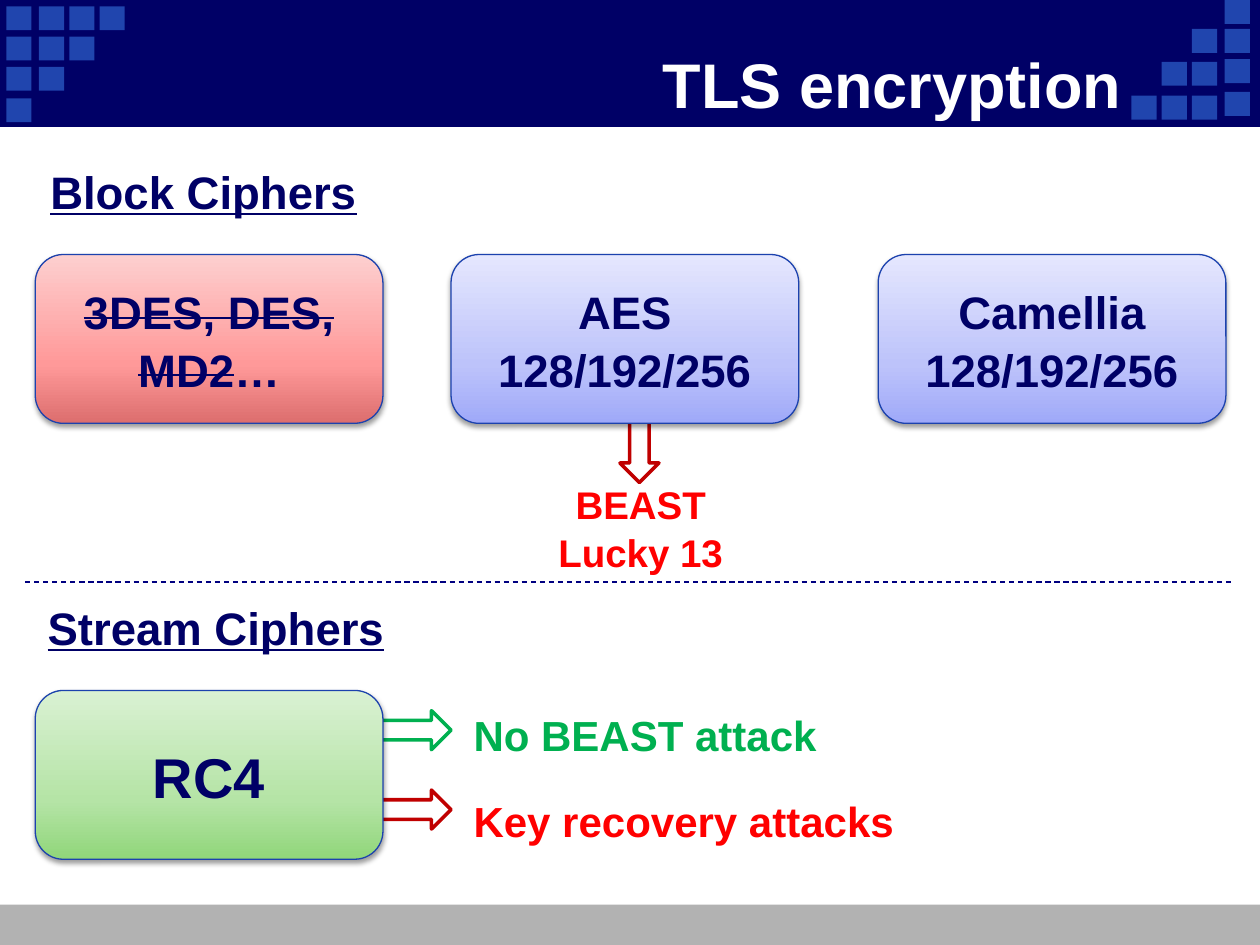
import copy

import pptx
import pptx.dml.color
import pptx.enum.dml
import pptx.enum.shapes
import pptx.enum.text
import pptx.oxml.ns
import pptx.util
from lxml import etree

RGBColor = pptx.dml.color.RGBColor
SHAPE = pptx.enum.shapes.MSO_SHAPE
ALIGN = pptx.enum.text.PP_ALIGN
ANCHOR = pptx.enum.text.MSO_ANCHOR

NAVY = RGBColor(0x00, 0x00, 0x66)
WHITE = RGBColor(0xFF, 0xFF, 0xFF)
GRAY = RGBColor(0xB2, 0xB2, 0xB2)
SQUARE_BLUE = RGBColor(0x20, 0x45, 0xAE)
OUTLINE_BLUE = RGBColor(0x1C, 0x42, 0xAE)
DIVIDER_BLUE = RGBColor(0x00, 0x00, 0x80)
RED = RGBColor(0xFF, 0x00, 0x00)
DARK_RED = RGBColor(0xC0, 0x00, 0x00)
GREEN = RGBColor(0x00, 0xB0, 0x50)
# Gradients run from the bottom of a box to its top.
BLUES = RGBColor(0x9F, 0xA9, 0xF9), RGBColor(0xBD, 0xC3, 0xFA), RGBColor(0xE5, 0xE7, 0xFE)
REDS = RGBColor(0xDC, 0x6E, 0x6E), RGBColor(0xFF, 0x99, 0x99), RGBColor(0xFD, 0xCF, 0xCF)
GREENS = RGBColor(0x90, 0xD6, 0x7A), RGBColor(0xB5, 0xE4, 0xA6), RGBColor(0xDA, 0xF1, 0xD3)
STOPS = 0, 0.35, 1

# The slide is a grid of 100 columns by 75 rows; boxes are left, top, width, height.
WIDTH, HEIGHT = pptx.util.Inches(10), pptx.util.Inches(7.5)
COLUMN, ROW = WIDTH / 100, HEIGHT / 75
CIPHER_WIDTH, CIPHER_HEIGHT = 27.6, 13.4
ARROW_LENGTH, ARROW_BREADTH = 6.3, 3.1

# Column position: row positions of the squares in it.
LEFT_SQUARES = {0.5: (0.5, 2.9, 5.3, 7.8), 3.1: (0.5, 2.9, 5.3),
                5.5: (0.5, 2.9), 7.9: (0.5,)}
RIGHT_SQUARES = {97.2: (0, 2.3, 4.7, 7.3), 94.6: (2.3, 4.9, 7.6),
                 92.2: (4.9, 7.6), 89.8: (7.6,)}


def cells(box):
    """Turn a grid box into slide lengths."""
    return [round(value * unit) for value, unit in zip(box, (COLUMN, ROW) * 2)]


def within(region, left, top, width, height):
    """Grid box of a part, measured from the corner of its region."""
    return region[0] + left, region[1] + top, width, height


def add_plain(page, kind, box, fill=None, line=None, weight=0.75):
    shape = page.shapes.add_shape(kind, *cells(box))
    shape.shadow.inherit = False
    if fill is None:
        shape.fill.background()
    else:
        shape.fill.solid()
        shape.fill.fore_color.rgb = fill
    if line is None:
        shape.line.fill.background()
    else:
        shape.line.color.rgb = line
        shape.line.width = pptx.util.Pt(weight)
    return shape


def format_para(para, size, color, align):
    para.alignment = align
    para.line_spacing = 1.05
    for span in para.runs:
        span.font.name = "Arial"
        span.font.size = pptx.util.Pt(size)
        span.font.bold = True
        span.font.color.rgb = color


def add_text(page, box, lines, size, align=ALIGN.CENTER, gap=0):
    """Text box with one paragraph for each (wording, colour) pair."""
    shape = page.shapes.add_textbox(*cells(box))
    frame = shape.text_frame
    frame.word_wrap = True
    frame.text = "\n".join(wording for wording, color in lines)
    for index, (para, (wording, color)) in enumerate(zip(frame.paragraphs, lines)):
        format_para(para, size, color, align)
        if index and gap:
            para.space_before = pptx.util.Pt(gap)
    return frame


def add_heading(page, box, wording):
    frame = add_text(page, box, [(wording, NAVY)], 26)
    frame.paragraphs[0].runs[0].font.underline = True


def shade(shape, colors):
    fill = shape.fill
    fill.gradient()
    fill.gradient_angle = 90
    stops = shape._element.spPr.find(".//" + pptx.oxml.ns.qn("a:gsLst"))
    stops.append(copy.deepcopy(stops[0]))
    for stop, position, color in zip(fill.gradient_stops, STOPS, colors):
        stop.position = position
        stop.color.rgb = color


def drop_shadow(shape):
    qn = pptx.oxml.ns.qn
    effects = shape._element.spPr.find(qn("a:effectLst"))
    shadow = etree.SubElement(
        effects, qn("a:outerShdw"), blurRad=str(pptx.util.Pt(3.1)),
        dist=str(pptx.util.Pt(1.6)), dir="5400000", rotWithShape="0")
    color = etree.SubElement(shadow, qn("a:srgbClr"), val="000000")
    etree.SubElement(color, qn("a:alpha"), val="38000")


def add_cipher(page, region, left, top, wording, colors, size=26, struck=""):
    """Rounded cipher box; the struck wording comes before the plain one."""
    box = within(region, left, top, CIPHER_WIDTH, CIPHER_HEIGHT)
    shape = add_plain(page, SHAPE.ROUNDED_RECTANGLE, box, WHITE, OUTLINE_BLUE)
    shade(shape, colors)
    drop_shadow(shape)
    frame = shape.text_frame
    frame.word_wrap = True
    frame.vertical_anchor = ANCHOR.MIDDLE
    para = frame.paragraphs[0]
    if struck:
        span = para.add_run()
        span.text = struck
        span._r.get_or_add_rPr().set("strike", "sngStrike")
    para.add_run().text = wording
    format_para(para, size, NAVY, ALIGN.CENTER)


def add_header(page, region, wording):
    add_plain(page, SHAPE.RECTANGLE, region, NAVY, NAVY)
    for left, tops in (LEFT_SQUARES | RIGHT_SQUARES).items():
        for top in tops:
            add_plain(page, SHAPE.RECTANGLE, within(region, left, top, 2, 1.9), SQUARE_BLUE)
    title = page.shapes.title
    title.left, title.top, title.width, title.height = cells(
        within(region, 9.2, 3.5, 80.8, 6.2))
    frame = title.text_frame
    frame.text = wording
    frame.auto_size = pptx.enum.text.MSO_AUTO_SIZE.NONE
    frame.vertical_anchor = ANCHOR.MIDDLE
    format_para(frame.paragraphs[0], 36, WHITE, ALIGN.RIGHT)
    frame.paragraphs[0].line_spacing = 1
    page.shapes._spTree.append(title._element)


def add_block_ciphers(page, region):
    add_heading(page, within(region, 0, 0, 28.3, 5.4), "Block Ciphers")
    add_plain(page, SHAPE.DOWN_ARROW,
              within(region, 47.2, 19.7, ARROW_BREADTH, ARROW_LENGTH), line=DARK_RED, weight=2)
    add_cipher(page, region, 0.8, 7.9, "…", REDS, struck="3DES, DES, MD2")
    add_cipher(page, region, 33.8, 7.9, "AES 128/192/256", BLUES)
    add_cipher(page, region, 67.7, 7.9, "Camellia 128/192/256", BLUES)
    add_text(page, within(region, 38.6, 25.2, 20.5, 8.4),
             [("BEAST", RED), ("Lucky 13", RED)], 22)


def add_divider(page, left, right, top):
    start_x, start_y, end_x, end_y = cells((left, top, right, top))
    line = page.shapes.add_connector(
        pptx.enum.shapes.MSO_CONNECTOR.STRAIGHT, start_x, start_y, end_x, end_y)
    line.line.color.rgb = DIVIDER_BLUE
    line.line.width = pptx.util.Pt(0.75)
    line.line.dash_style = pptx.enum.dml.MSO_LINE.DASH
    etree.SubElement(line._element.spPr, pptx.oxml.ns.qn("a:effectLst"))


def add_stream_ciphers(page, region):
    add_heading(page, within(region, 0, 0, 30.3, 5.4), "Stream Ciphers")
    for top, color in ((9.5, GREEN), (15.8, DARK_RED)):
        add_plain(page, SHAPE.RIGHT_ARROW,
                  within(region, 27.5, top, ARROW_LENGTH, ARROW_BREADTH), line=color, weight=2)
    add_cipher(page, region, 0.8, 7.9, "RC4", GREENS, size=32)
    add_text(page, within(region, 34.6, 8.7, 39.9, 11.8),
             [("No BEAST attack", GREEN), ("Key recovery attacks", RED)],
             24, ALIGN.LEFT, gap=19)


def main():
    deck = pptx.Presentation()
    deck.slide_width, deck.slide_height = WIDTH, HEIGHT
    page = deck.slides.add_slide(deck.slide_layouts.get_by_name("Title Only"))
    add_plain(page, SHAPE.RECTANGLE, (0, 71.8, 100, 3.2), GRAY)
    add_header(page, (0, 0, 100, 10), "TLS encryption")
    add_block_ciphers(page, (2, 12.3, 96, 33.6))
    add_divider(page, 2, 98, 46.2)
    add_stream_ciphers(page, (2, 46.9, 96, 21.3))
    deck.save("out.pptx")


if __name__ == "__main__":
    main()
